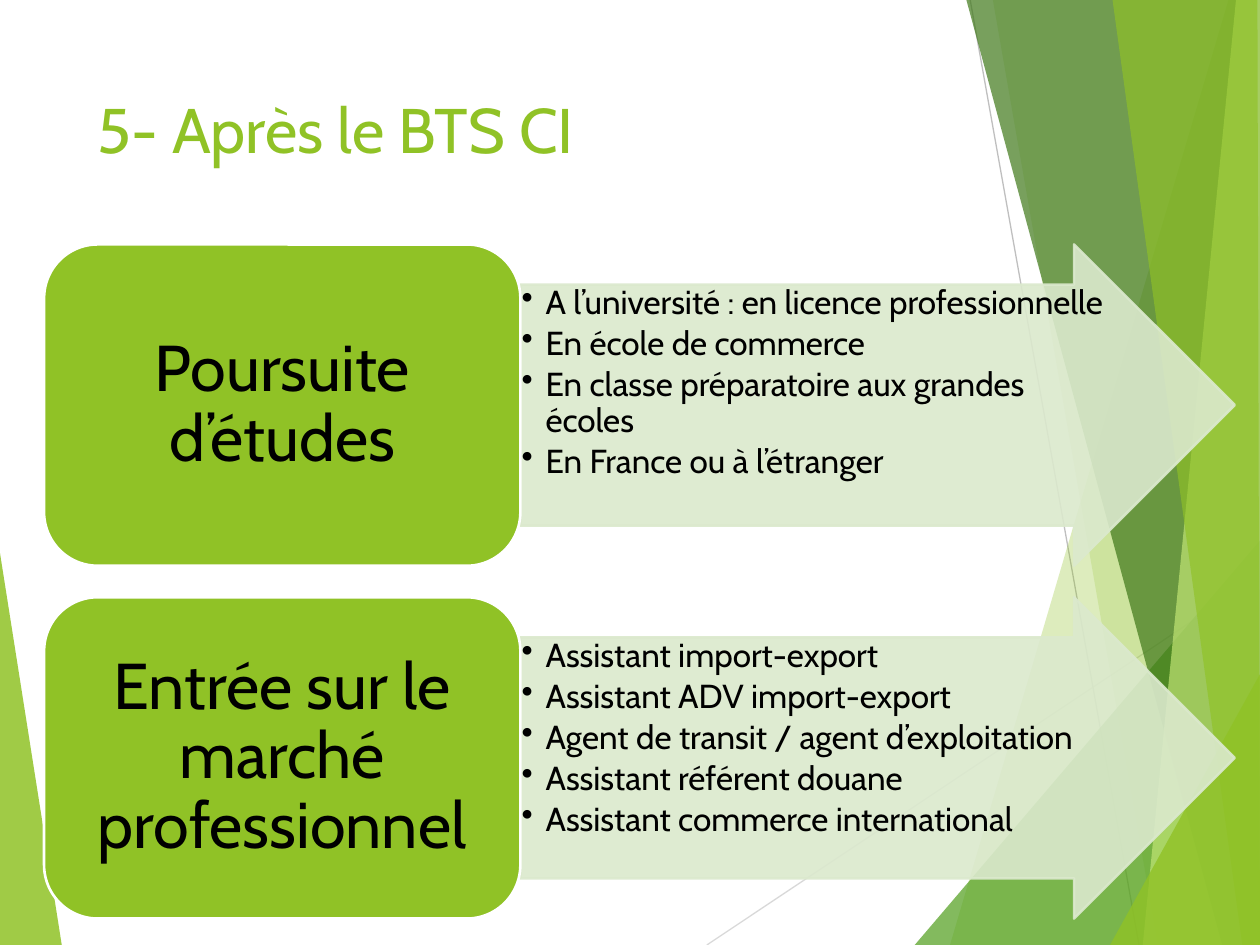
from pptx import Presentation
from pptx.dml.color import RGBColor
from pptx.enum.shapes import MSO_CONNECTOR as Conn, MSO_SHAPE as Shape
from pptx.enum.text import MSO_ANCHOR as Anchor, PP_ALIGN as Align
from pptx.oxml.ns import qn
from pptx.util import Inches, Pt
from lxml.etree import SubElement

THEME = {
    "font": "Cabin", "title_size": 36, "label_size": 37, "bullet_size": 19,
    "green": "90C226", "mid": "54A021", "dark": "3F7819", "lime": "C0E474",
    "pale": "DBE9CD", "white": "FFFFFF", "black": "000000",
    "light_grey": "D9D9D9", "grey": "BFBFBF",
}
TITLE = "5- Après le BTS CI"
PATHS = [
    ("Poursuite d’études", [
        "A l’université : en licence professionnelle",
        "En école de commerce",
        "En classe préparatoire aux grandes écoles",
        "En France ou à l’étranger",
    ]),
    ("Entrée sur le marché professionnel", [
        "Assistant import-export",
        "Assistant ADV import-export",
        "Agent de transit / agent d’exploitation",
        "Assistant référent douane",
        "Assistant commerce international",
    ]),
]
LEFT_FACET = ("green", 85, [(0, 4.39), (0.49, 7.5), (0, 7.5)])
RAYS = [("light_grey", (5.61, 7.5), (10, 4.57)), ("grey", (7.7, 0), (9.04, 7.5))]
RIGHT_FACETS = [
    ("green", 30, [(9.75, 0), (7.54, 7.5), (10, 7.5), (10, 0)]),
    ("green", 20, [(7.88, 0), (9.19, 7.5), (10, 7.5), (10, 0)]),
    ("mid", 72, [(7.26, 7.5), (10, 4.29), (10, 7.5)]),
    ("dark", 70, [(7.67, 0), (9.7, 7.5), (10, 7.5), (10, 0)]),
    ("lime", 70, [(9.81, 0), (9.07, 7.5), (10, 7.5), (10, 0)]),
    ("green", 65, [(8.83, 0), (9.86, 7.5), (10, 7.5), (9.98, 0)]),
    ("green", 80, [(8.81, 7.5), (10, 5.35), (10, 7.5)]),
]
ROW_TOP, ROW_STEP, ROW_H = 1.94, 2.8, 2.55
LABEL_X, LABEL_W = 0.35, 3.78
ARROW_X, ARROW_W = LABEL_X + LABEL_W, 5.67
BULLET_W, BULLET_H = 4.71, 1.91


def color(name):
    return RGBColor.from_string(THEME[name])


def paint(sp, fill, opacity=100, line=None):
    sp.shadow.inherit = False
    sp.fill.solid()
    sp.fill.fore_color.rgb = color(fill)
    if line:
        sp.line.color.rgb = color(line)
        sp.line.width = Pt(1.5)
    else:
        sp.line.fill.background()
    if opacity < 100:
        for clr in sp._element.spPr.iter(qn("a:srgbClr")):
            SubElement(clr, qn("a:alpha"), val=str(opacity * 1000))


def write(p, text, size, ink="black", **layout):
    for name, value in layout.items():
        setattr(p, name, value)
    r = p.add_run()
    r.text = text
    r.font.color.rgb = color(ink)
    for name, value in {"name": THEME["font"], "size": Pt(THEME[size])}.items():
        setattr(r.font, name, value)


def frame(sp, anchor, inset_x, inset_y):
    tf = sp.text_frame
    values = {
        "word_wrap": True, "vertical_anchor": anchor,
        "margin_left": Inches(inset_x), "margin_right": Inches(inset_x),
        "margin_top": Inches(inset_y), "margin_bottom": Inches(inset_y),
    }
    for name, value in values.items():
        setattr(tf, name, value)
    return tf


def add_facet(shapes, fill, opacity, points):
    points = [(Inches(x), Inches(y)) for x, y in points]
    builder = shapes.build_freeform(*points[0])
    builder.add_line_segments(points[1:])
    paint(builder.convert_to_shape(), fill, opacity)


def add_ray(shapes, ink, start, end):
    ends = [Inches(v) for v in start + end]
    line = shapes.add_connector(Conn.STRAIGHT, *ends)
    line.line.color.rgb = color(ink)
    line.line.width = Pt(0.75)
    SubElement(line._element.spPr, qn("a:effectLst"))


def add_bullets(shapes, items, top):
    box = [Inches(v) for v in (ARROW_X, top, BULLET_W, BULLET_H)]
    tf = frame(shapes.add_textbox(*box), Anchor.TOP, 0.01, 0.01)
    for i, item in enumerate(items):
        p = tf.add_paragraph() if i else tf.paragraphs[0]
        write(p, item, "bullet_size", line_spacing=0.9, space_after=Pt(2.85))
        pPr = p._p.get_or_add_pPr()
        pPr.set("marL", str(Inches(0.19)))
        pPr.set("indent", str(-Inches(0.19)))
        SubElement(pPr, qn("a:buChar"), char="•")


def add_path(shapes, label, items, top):
    box = [Inches(v) for v in (ARROW_X, top, ARROW_W, ROW_H)]
    arrow = shapes.add_shape(Shape.RIGHT_ARROW, *box)
    arrow.adjustments[0] = 0.75
    paint(arrow, "pale", 90, "pale")
    add_bullets(shapes, items, top + (ROW_H - BULLET_H) / 2)

    box = [Inches(v) for v in (LABEL_X, top, LABEL_W, ROW_H)]
    card = shapes.add_shape(Shape.ROUNDED_RECTANGLE, *box)
    paint(card, "green", line="white")
    tf = frame(card, Anchor.MIDDLE, 0.15, 0.08)
    write(tf.paragraphs[0], label, "label_size",
          alignment=Align.CENTER, line_spacing=0.9)


def main():
    prs = Presentation()
    prs.slide_width, prs.slide_height = Inches(10), Inches(7.5)
    slide = prs.slides.add_slide(prs.slide_layouts[5])
    shapes = slide.shapes

    title = shapes.title
    place = {"left": 0.67, "top": 0.67, "width": 6.94, "height": 1.44}
    for name, value in place.items():
        setattr(title, name, Inches(value))
    tf = frame(title, Anchor.TOP, 0.1, 0.05)
    write(tf.paragraphs[0], TITLE, "title_size", "green", alignment=Align.LEFT)

    add_facet(shapes, *LEFT_FACET)
    for ray in RAYS:
        add_ray(shapes, *ray)
    for facet in RIGHT_FACETS:
        add_facet(shapes, *facet)
    for i, (label, items) in enumerate(PATHS):
        add_path(shapes, label, items, ROW_TOP + i * ROW_STEP)
    prs.save("out.pptx")


if __name__ == "__main__":
    main()
